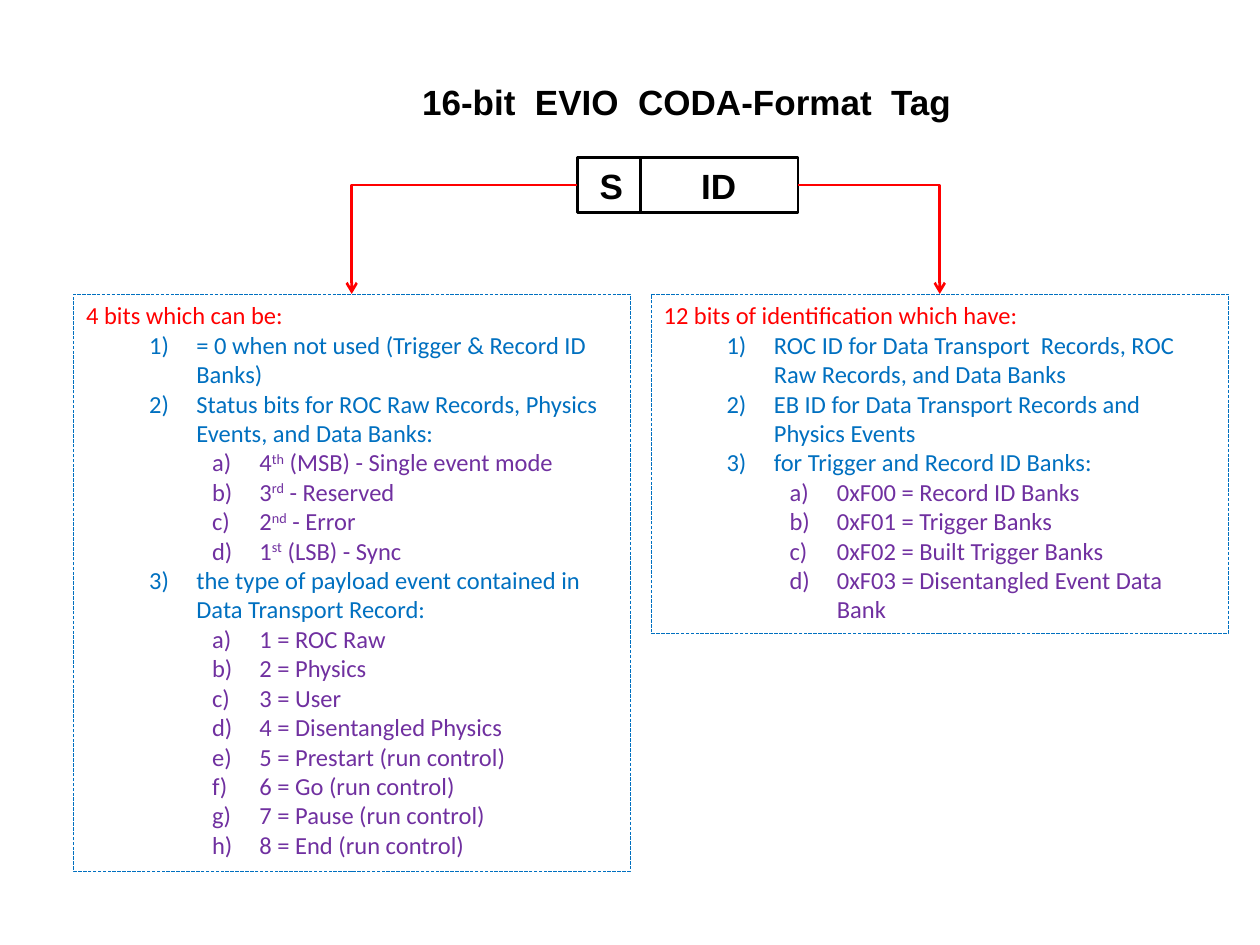
from lxml import etree
from pptx import Presentation
from pptx.dml.color import RGBColor
from pptx.enum.dml import MSO_LINE
from pptx.enum.shapes import MSO_CONNECTOR, MSO_SHAPE
from pptx.enum.text import MSO_ANCHOR, MSO_AUTO_SIZE, PP_ALIGN
from pptx.oxml.ns import qn
from pptx.util import Pt

LONG_DASH = MSO_LINE.LONG_DASH
STRAIGHT, ELBOW = MSO_CONNECTOR.STRAIGHT, MSO_CONNECTOR.ELBOW
RECTANGLE = MSO_SHAPE.RECTANGLE
TOP, MIDDLE = MSO_ANCHOR.TOP, MSO_ANCHOR.MIDDLE
NO_FIT = MSO_AUTO_SIZE.NONE
LEFT = PP_ALIGN.LEFT

BLACK = RGBColor(0, 0, 0)
WHITE = RGBColor(255, 255, 255)
RED = RGBColor(255, 0, 0)
BLUE = RGBColor(0, 0x70, 0xC0)
PURPLE = RGBColor(0x70, 0x30, 0xA0)

LEVEL_COLORS = (RED, BLUE, PURPLE)
LEVEL_INDENTS = (0, 63, 99)
LEVEL_NUMBERS = (None, "arabicParenR", "alphaLcParenR")
HANGING = 27

STATUS_LINES = (
    (0, "4 bits which can be:"),
    (1, "= 0 when not used (Trigger & Record ID Banks)"),
    (1, "Status bits for ROC Raw Records, Physics Events, and Data Banks:"),
    (2, "4^th^ (MSB) - Single event mode"),
    (2, "3^rd^ - Reserved"),
    (2, "2^nd^ - Error"),
    (2, "1^st^ (LSB) - Sync"),
    (1, "the type of payload event contained in Data Transport Record:"),
    (2, "1 = ROC Raw"),
    (2, "2 = Physics"),
    (2, "3 = User"),
    (2, "4 = Disentangled Physics"),
    (2, "5 = Prestart (run control)"),
    (2, "6 = Go (run control)"),
    (2, "7 = Pause (run control)"),
    (2, "8 = End (run control)"),
)
ID_LINES = (
    (0, "12 bits of identification which have:"),
    (1, "ROC ID for Data Transport  Records, ROC Raw Records, and Data Banks"),
    (1, "EB ID for Data Transport Records and Physics Events"),
    (1, "for Trigger and Record ID Banks:"),
    (2, "0xF00 = Record ID Banks"),
    (2, "0xF01 = Trigger Banks"),
    (2, "0xF02 = Built Trigger Banks"),
    (2, "0xF03 = Disentangled Event Data Bank"),
)


def place(shape, box):
    """Move a shape to a box of left, top, width and height in points."""
    shape.left, shape.top, shape.width, shape.height = map(Pt, box)


def set_font(para, name, size, color, bold=False):
    """Set the font of a whole paragraph."""
    font = para.font
    font.name, font.size, font.bold = name, Pt(size), bold
    font.color.rgb = color


def add_before_font(para, tag, **attributes):
    """Add a paragraph property in front of the paragraph's font."""
    element = etree.Element(qn(tag), attributes)
    para.font._element.addprevious(element)
    return element


def fill_title(title, box):
    """Write the heading with its soft shadow."""
    place(title, box)
    frame = title.text_frame
    frame.auto_size, frame.vertical_anchor = NO_FIT, MIDDLE
    para = frame.paragraphs[0]
    para.alignment = LEFT
    set_font(para, "Arial", 20, BLACK, True)
    span = para.add_run()
    span.text = "16-bit  EVIO  CODA-Format  Tag"
    effects = etree.SubElement(span._r.get_or_add_rPr(), qn("a:effectLst"))
    shadow = etree.SubElement(effects, qn("a:outerShdw"), blurRad="38100",
                              dist="38100", dir="2700000", algn="tl")
    color = etree.SubElement(shadow, qn("a:srgbClr"), val="000000")
    etree.SubElement(color, qn("a:alpha"), val="43000")


def fill_panel(panel, box, lines):
    """Write a dashed panel that holds a numbered outline."""
    place(panel, box)
    panel.fill.solid()
    panel.fill.fore_color.rgb = WHITE
    panel.line.color.rgb = BLUE
    panel.line.width = Pt(0.25)
    panel.line.dash_style = LONG_DASH
    frame = panel.text_frame
    frame.auto_size, frame.vertical_anchor = NO_FIT, TOP
    for index, (level, text) in enumerate(lines):
        para = frame.add_paragraph() if index else frame.paragraphs[0]
        para.level, para.space_before = level, Pt(0)
        set_font(para, "Calibri", 14, LEVEL_COLORS[level])
        properties = para._p.get_or_add_pPr()
        properties.set("marL", str(Pt(LEVEL_INDENTS[level])))
        properties.set("indent", str(Pt(-HANGING if level else 0)))
        if level:
            add_before_font(para, "a:buFont", typeface="+mj-lt")
            add_before_font(para, "a:buAutoNum", type=LEVEL_NUMBERS[level])
        else:
            add_before_font(para, "a:buNone")
        for part, words in enumerate(text.split("^")):
            span = para.add_run()
            span.text = words
            if part % 2:
                span._r.get_or_add_rPr().set("baseline", "30000")


def style_connector(connector, color):
    """Give a connector its colour and width, without a shadow."""
    connector.line.color.rgb = color
    connector.line.width = Pt(1.5)
    etree.SubElement(connector._element.spPr, qn("a:effectLst"))


def add_tag(page, box, divider_offset):
    """Draw the tag word, split into its S and ID fields."""
    left, top, width, height = box
    tag = page.shapes.add_shape(RECTANGLE, *map(Pt, box))
    tag.shadow.inherit = False
    tag.fill.solid()
    tag.fill.fore_color.rgb = WHITE
    tag.line.color.rgb = BLACK
    tag.line.width = Pt(1.5)
    frame = tag.text_frame
    frame.margin_left, frame.vertical_anchor = Pt(12.7), MIDDLE
    para = frame.paragraphs[0]
    para.alignment = LEFT
    set_font(para, "Arial", 20, BLACK, True)
    tabs = add_before_font(para, "a:tabLst")
    etree.SubElement(tabs, qn("a:tab"), pos=str(Pt(58)), algn="l")
    para.add_run().text = "S\tID"
    x = Pt(left + divider_offset)
    divider = page.shapes.add_connector(STRAIGHT, x, Pt(top), x, Pt(top + height))
    style_connector(divider, BLACK)
    return tag


def add_arrow(page, tag, side, panel):
    """Lead a bent arrow from a side of the tag to the top of a panel."""
    arrow = page.shapes.add_connector(ELBOW, tag.left, tag.top, panel.left, panel.top)
    arrow.begin_connect(tag, side)
    arrow.end_connect(panel, 0)
    arrow._element.spPr.find(qn("a:prstGeom")).set("prst", "bentConnector2")
    style_connector(arrow, RED)
    etree.SubElement(arrow.line._get_or_add_ln(), qn("a:tailEnd"), type="arrow")


def main():
    """Build the deck."""
    deck = Presentation()
    deck.slide_width, deck.slide_height = Pt(720), Pt(540)
    page = deck.slides.add_slide(deck.slide_layouts[3])
    title, status_panel, id_panel = page.placeholders
    fill_title(title, (234, 42, 348, 31.5))
    fill_panel(id_panel, (372, 168, 330, 194), ID_LINES)
    fill_panel(status_panel, (42, 168, 318, 330), STATUS_LINES)
    tag = add_tag(page, (330, 90, 126, 31.5), 36)
    add_arrow(page, tag, 1, status_panel)
    add_arrow(page, tag, 3, id_panel)
    deck.save("out.pptx")


if __name__ == "__main__":
    main()
